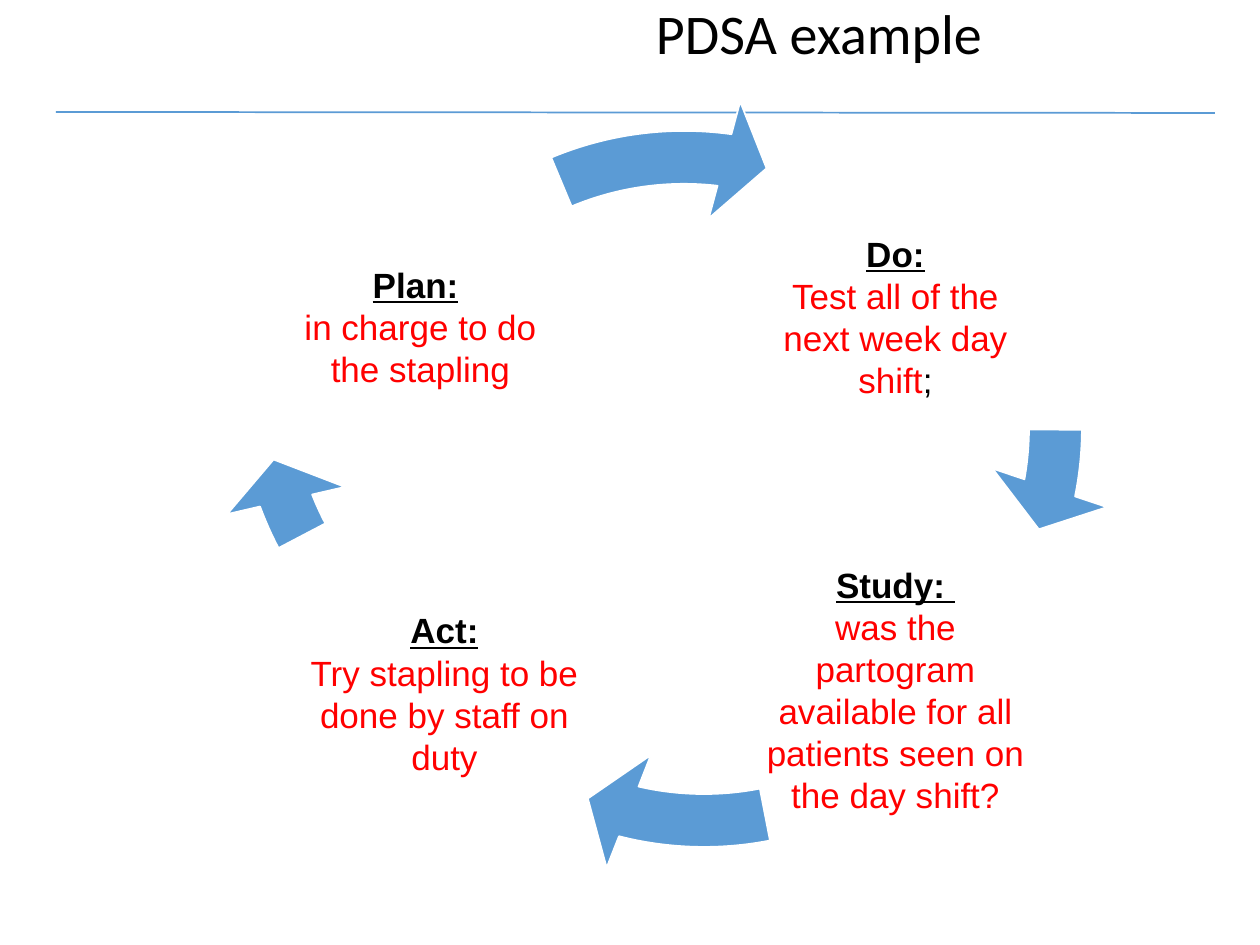
from lxml.etree import SubElement
from pptx import Presentation
from pptx.dml.color import RGBColor
from pptx.enum.shapes import MSO_CONNECTOR, MSO_SHAPE
from pptx.enum.text import MSO_ANCHOR, PP_ALIGN
from pptx.oxml.ns import qn
from pptx.util import Emu, Pt

EMU_PER_PX = 914400 / 126
COLORS = {"arrow": "5B9BD5", "outline": "FFFFFF", "text": "000000", "detail": "FF0000"}
RING = 756  # side of the square that holds each circular arrow

# Heading runs are (text, underlined); detail runs are (text, colour)
STEPS = [
    ((762, 183, 267, 267), [("Do:", True)],
     [("Test all of the next week day shift", "detail"), (";", "text")]),
    ((762, 552, 267, 275), [("Study: ", True)],
     [("was the partogram available for all patients seen on the day shift?", "detail")]),
    ((306, 538, 277, 310), [("Act:", True)],
     [("Try stapling to be done by staff on duty", "detail")]),
    ((287, 193, 267, 267), [("Plan:", True), (" ", False)],
     [("in charge to do the stapling", "detail")]),
]

# Left, top, start angle and end angle in degrees
ARROWS = [
    (360, 50, 0.3, 10.87),
    (326, 125, 78.93, 103.7),
    (205, 10, 152.26, 159.23),
    (306, 97, 247.3, 277.33),
]


def px(length):
    return Emu(round(length * EMU_PER_PX))


def color(name):
    return RGBColor.from_string(COLORS[name])


def add_header(slide, box):
    left, top, width, height = map(px, box)
    title = slide.shapes.title
    title.left, title.top, title.width, title.height = left, top, width, height
    title.text_frame.text = "PDSA example"
    title.text_frame.vertical_anchor = MSO_ANCHOR.TOP
    heading = title.text_frame.paragraphs[0]
    heading.alignment = PP_ALIGN.CENTER
    heading.line_spacing = 0.9
    heading.font.name = "Calibri"
    heading.font.size = Pt(32)
    heading.font.color.rgb = color("text")

    # Rule under the title
    rule = slide.shapes.add_connector(
        MSO_CONNECTOR.STRAIGHT, px(56), px(112), px(1215), px(113))
    rule.line.color.rgb = color("arrow")
    rule.line.width = Pt(1)
    SubElement(rule._element.spPr, qn("a:effectLst"))


def add_step(slide, box, heading_runs, detail_runs):
    frame = slide.shapes.add_textbox(*map(px, box)).text_frame
    frame.word_wrap = True
    frame.vertical_anchor = MSO_ANCHOR.MIDDLE
    frame.margin_left = frame.margin_right = px(4)
    frame.margin_top = frame.margin_bottom = px(4)
    heading, detail = frame.paragraphs[0], frame.add_paragraph()
    for paragraph in (heading, detail):
        paragraph.alignment = PP_ALIGN.CENTER
        paragraph.font.name = "Arial"
        paragraph.font.size = Pt(20)
    heading.font.bold = True
    heading.font.color.rgb = color("text")
    for text, underlined in heading_runs:
        run = heading.add_run()
        run.text = text
        run.font.underline = underlined
    for text, color_name in detail_runs:
        run = detail.add_run()
        run.text = text
        run.font.color.rgb = color(color_name)


def add_cycle_arrow(slide, left, top, start, end):
    arrow = slide.shapes.add_shape(
        MSO_SHAPE.CIRCULAR_ARROW, px(left), px(top), px(RING), px(RING))
    arrow.shadow.inherit = False
    arrow.fill.solid()
    arrow.fill.fore_color.rgb = color("arrow")
    arrow.line.color.rgb = color("outline")
    arrow.line.width = Pt(1)
    # Thickness, head angle, end, start, head width; one degree is 0.6
    settings = (0.07, 7.75 * 0.6, end * 0.6, start * 0.6, 0.08)
    for index, value in enumerate(settings):
        arrow.adjustments[index] = value


def main():
    prs = Presentation()
    prs.slide_width, prs.slide_height = px(1260), px(945)
    slide = prs.slides.add_slide(prs.slide_layouts[5])
    add_header(slide, (378, 0, 882, 110))
    for step, arrow in zip(STEPS, ARROWS):
        add_step(slide, *step)
        add_cycle_arrow(slide, *arrow)
    prs.save("out.pptx")


if __name__ == "__main__":
    main()
